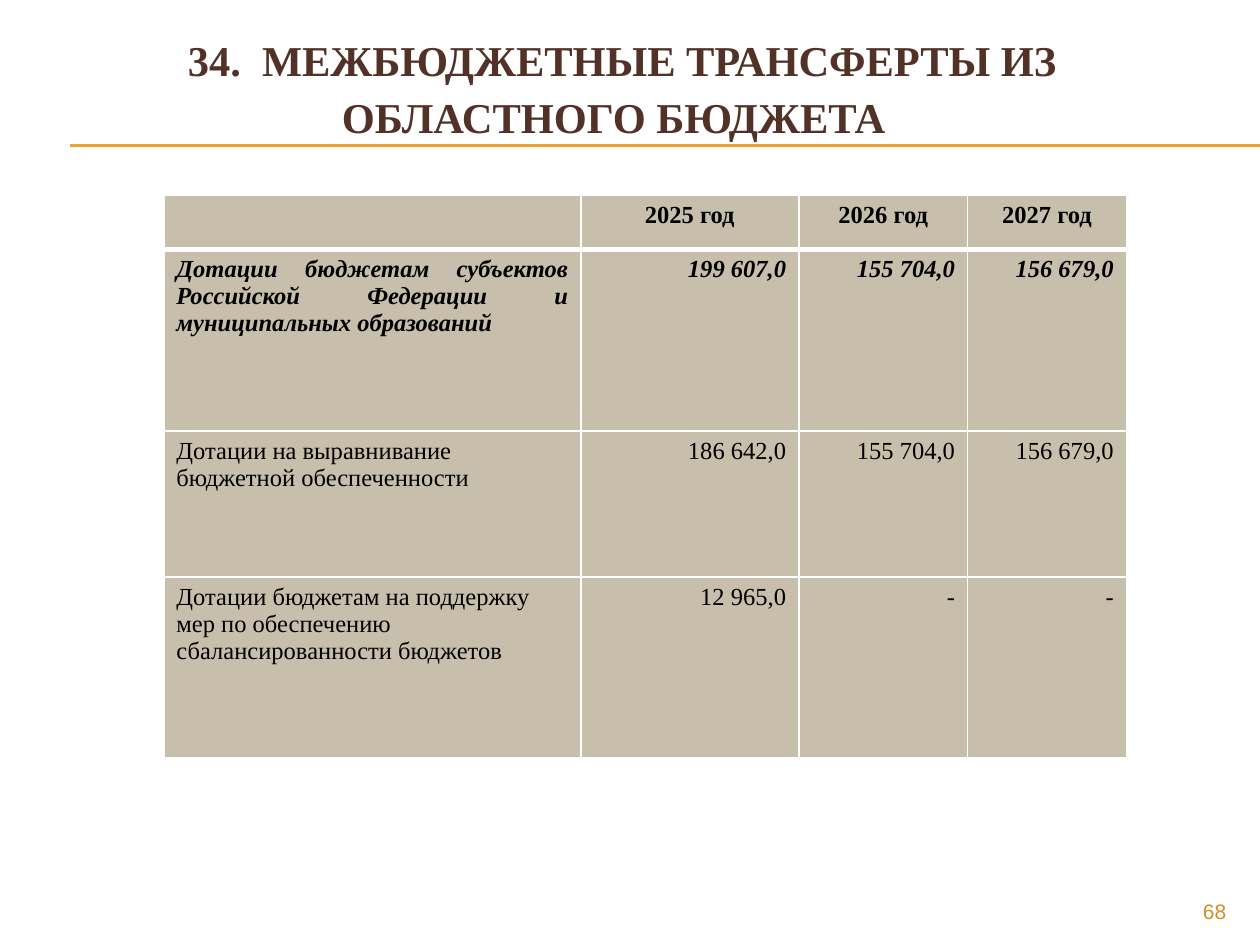
from lxml.etree import SubElement
from pptx import Presentation
from pptx.dml.color import RGBColor
from pptx.enum.shapes import MSO_CONNECTOR as Connector
from pptx.enum.text import MSO_ANCHOR as Anchor, PP_ALIGN as Align
from pptx.oxml import parse_xml
from pptx.oxml.ns import nsdecls, qn
from pptx.util import Pt

COLORS = {"title": "523227", "space": "4E3B30", "rule": "F0A22E", "cell": "C7BFAC",
          "border": "FFFFFF", "text": "000000", "number": "D38E27"}
SERIF, SANS = "Times New Roman", "Arial"

COLUMNS = [238.3, 124.6, 96.5, 90.7]
ROWS = [31, 103.7, 83.5, 103]
TABLE = [
    ([], "2025 год", "2026 год", "2027 год"),
    (["Дотации бюджетам субъектов Российской Федерации и муниципальных образований"],
     "199 607,0", "155 704,0", "156 679,0"),
    (["Дотации на выравнивание", "бюджетной обеспеченности"],
     "186 642,0", "155 704,0", "156 679,0"),
    (["Дотации бюджетам на поддержку", "мер по обеспечению", "сбалансированности бюджетов"],
     "12 965,0", "-", "-"),
]


def color(name):
    return RGBColor.from_string(COLORS[name])


def add_run(paragraph, text, size, fill, face=SERIF, bold=False, italic=False):
    run = paragraph.add_run()
    run.text = text
    font = run.font
    font.size, font.name, font.bold, font.italic = Pt(size), face, bold, italic
    font.color.rgb = color(fill)


def add_frame(slide, left, top, width, height, align):
    frame = slide.shapes.add_textbox(Pt(left), Pt(top), Pt(width), Pt(height)).text_frame
    frame.word_wrap = True
    frame.paragraphs[0].alignment = align
    return frame


def add_title(slide, left, top, width, height):
    frame = add_frame(slide, left, top, width, height, Align.CENTER)
    frame.vertical_anchor = Anchor.MIDDLE
    frame.margin_top = Pt(10.8)
    heading = frame.paragraphs[0]
    add_run(heading, " ", 39.6, "space")
    add_run(heading, "34.  МЕЖБЮДЖЕТНЫЕ ТРАНСФЕРТЫ ИЗ ОБЛАСТНОГО БЮДЖЕТА", 24.3, "title", bold=True)


def add_rules(slide, left, top, right):
    for y in (top, top + 0.7):
        rule = slide.shapes.add_connector(Connector.STRAIGHT, Pt(left), Pt(y), Pt(right), Pt(y))
        rule.line.color.rgb = color("rule")
        rule.line.width = Pt(0.75)
        SubElement(rule._element.spPr, qn("a:effectLst"))


def set_borders(cell, top, bottom):
    # Border elements come before the fill in the cell properties
    sides = {"L": 1, "R": 1, "T": top, "B": bottom}
    for place, (side, width) in enumerate(sides.items()):
        cell._tc.get_or_add_tcPr().insert(place, parse_xml(
            f'<a:ln{side} {nsdecls("a")} w="{Pt(width)}"><a:solidFill>'
            f'<a:srgbClr val="{COLORS["border"]}"/></a:solidFill></a:ln{side}>'))


def add_transfers(slide, left, top):
    table = slide.shapes.add_table(len(ROWS), len(COLUMNS), Pt(left), Pt(top),
                                   Pt(sum(COLUMNS)), Pt(sum(ROWS))).table
    table.first_row = table.horz_banding = False
    for column, width in zip(table.columns, COLUMNS):
        column.width = Pt(width)
    for r, (height, values) in enumerate(zip(ROWS, TABLE)):
        table.rows[r].height = Pt(height)
        for c, value in enumerate(values):
            cell = table.cell(r, c)
            cell.fill.solid()
            cell.fill.fore_color.rgb = color("cell")
            set_borders(cell, 3 if r == 1 else 1, 3 if r == 0 else 1)
            if r == 0:
                align = Align.CENTER
            elif c > 0:
                align = Align.RIGHT
            else:
                align = Align.JUSTIFY if r == 1 else Align.LEFT
            lines = value if c == 0 else [value]
            for n, line in enumerate(lines):
                frame = cell.text_frame
                paragraph = frame.add_paragraph() if n else frame.paragraphs[0]
                paragraph.alignment = align
                add_run(paragraph, line, 14, "text", bold=r < 2, italic=r == 1)


def add_number(slide, left, top, width, height):
    frame = add_frame(slide, left, top, width, height, Align.RIGHT)
    add_run(frame.paragraphs[0], "68", 12, "number", SANS)


def main():
    deck = Presentation()
    deck.slide_width, deck.slide_height = Pt(720), Pt(540)
    slide = deck.slides.add_slide(deck.slide_layouts[6])
    add_rules(slide, 40.3, 82.8, 720)
    add_title(slide, 36.7, 9.4, 627.8, 59)
    add_transfers(slide, 93.6, 111.6)
    add_number(slide, 648, 509.8, 59.8, 19.4)
    deck.save("out.pptx")


if __name__ == "__main__":
    main()
